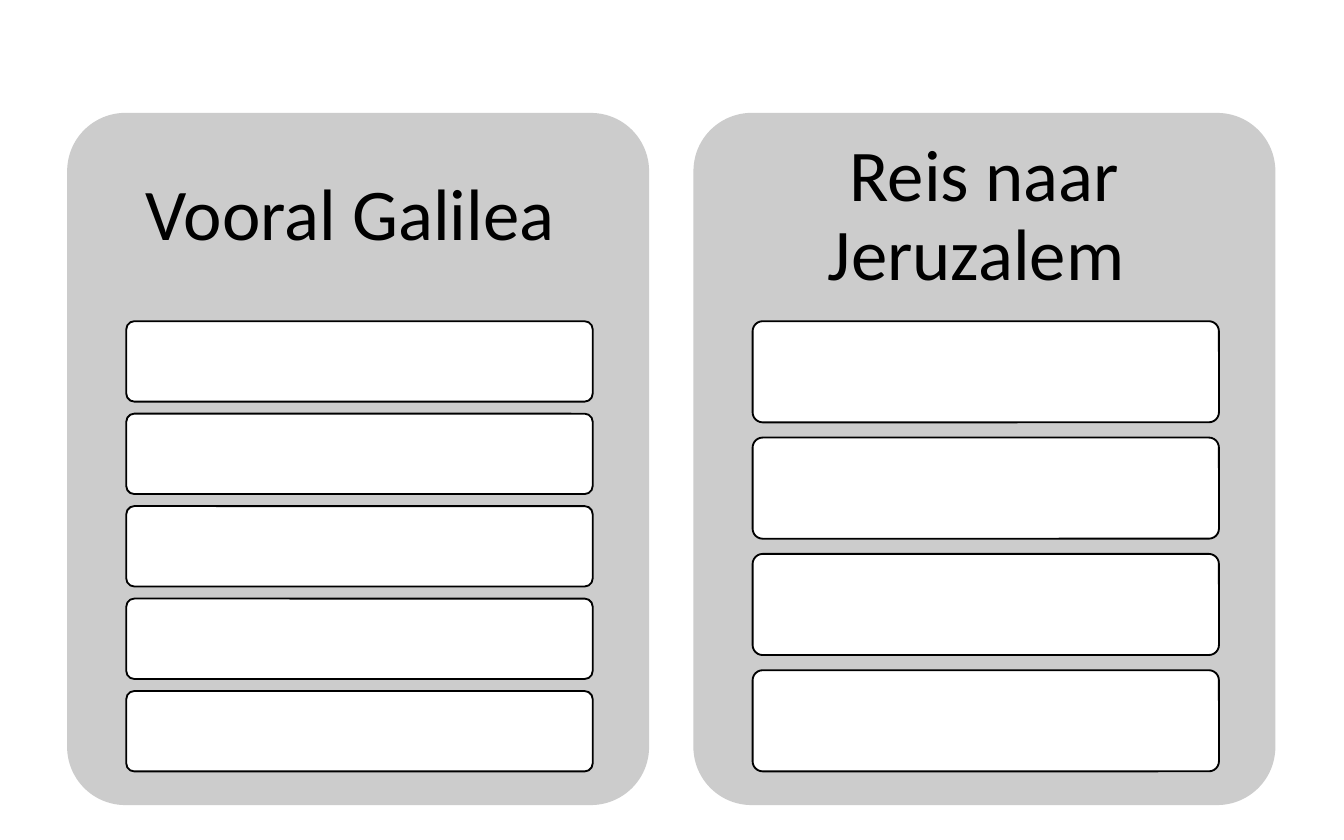
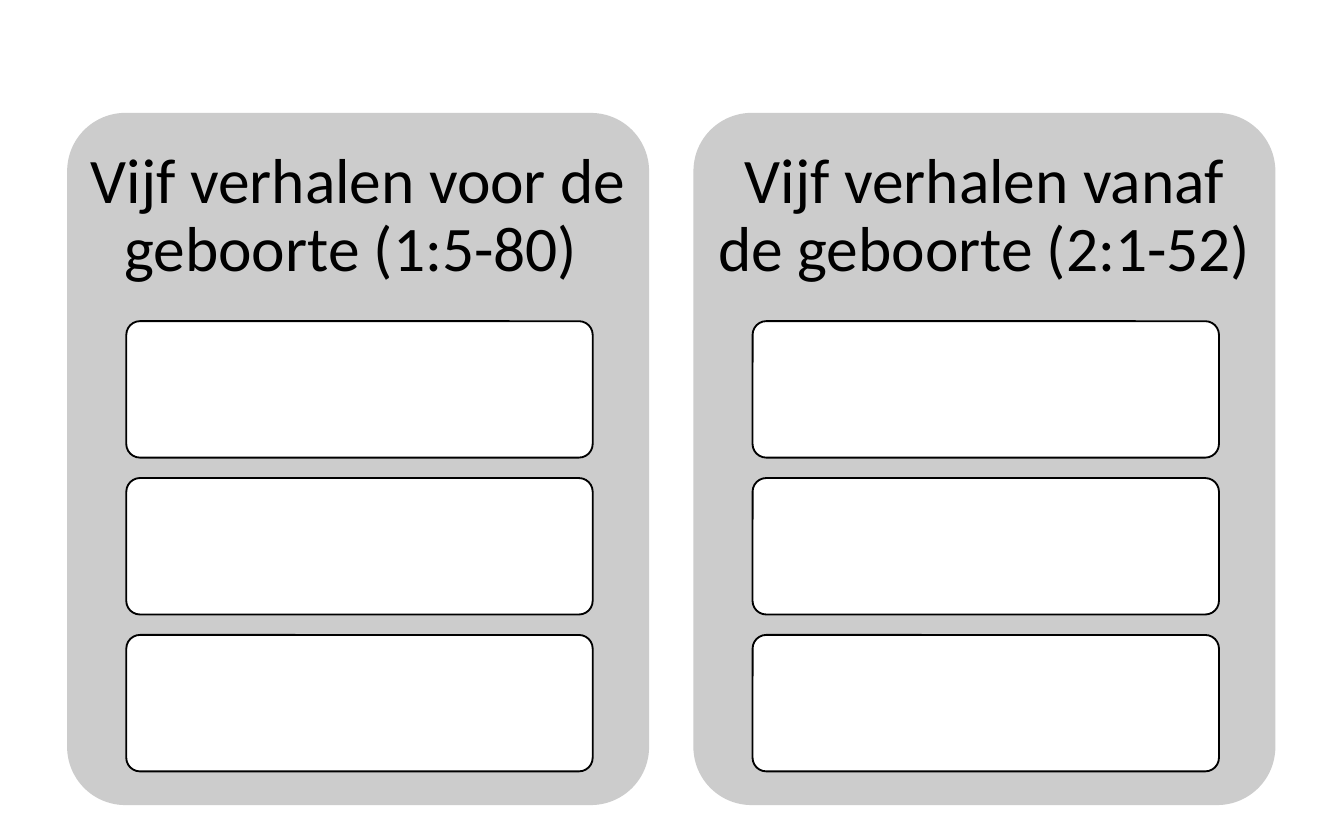
"""Build two slides that each compare two panels of empty answer boxes."""
from pptx import Presentation
from pptx.dml.color import RGBColor
from pptx.enum.shapes import MSO_SHAPE
from pptx.enum.text import MSO_ANCHOR, PP_ALIGN
from pptx.util import Inches, Pt

ROUNDED = MSO_SHAPE.ROUNDED_RECTANGLE
MIDDLE = MSO_ANCHOR.MIDDLE
CENTER = PP_ALIGN.CENTER

SLIDES = [
    {"size": 39, "inset": 0.16,
     "panels": [("Vooral Galilea ", 5), ("Reis naar Jeruzalem ", 4)]},
    {"size": 34, "inset": 0.14,
     "panels": [("Vijf verhalen voor de geboorte (1:5-80) ", 3),
                ("Vijf verhalen vanaf de geboorte (2:1-52) ", 3)]},
]

FONT = "Calibri"
BLACK, WHITE, GREY = "000000", "FFFFFF", "CCCCCC"
PANEL_LEFT, PANEL_TOP, PANEL_W, PANEL_H = 0.5, 0.84, 4.33, 5.15
PANEL_PITCH = 4.66
HEADING_H = 1.55
BOX_INDENT, BOX_W = 0.44, 3.47
STACK_H = 3.35
GAP_RATIO = 0.15


def color(value):
    return RGBColor.from_string(value)


def add_rounded(slide, x, y, w, h, fill, line=None):
    sp = slide.shapes.add_shape(ROUNDED, Inches(x), Inches(y), Inches(w), Inches(h))
    sp.adjustments[0] = 0.1
    sp.shadow.inherit = False
    sp.fill.solid()
    sp.fill.fore_color.rgb = color(fill)
    if line:
        sp.line.color.rgb = color(line)
        sp.line.width = Pt(1)
    else:
        sp.line.fill.background()


def add_heading(slide, x, text, size, inset):
    sp = slide.shapes.add_textbox(
        Inches(x), Inches(PANEL_TOP), Inches(PANEL_W), Inches(HEADING_H))
    tf = sp.text_frame
    tf.word_wrap = True
    tf.vertical_anchor = MIDDLE
    tf.margin_left = tf.margin_right = Inches(inset)
    tf.margin_top = tf.margin_bottom = Inches(inset)
    p = tf.paragraphs[0]
    p.text = text
    p.alignment = CENTER
    p.line_spacing = 0.9
    p.font.name = FONT
    p.font.size = Pt(size)
    p.font.color.rgb = color(BLACK)


def add_panel(slide, x, heading, count, size, inset):
    add_rounded(slide, x, PANEL_TOP, PANEL_W, PANEL_H, GREY)
    add_heading(slide, x, heading, size, inset)
    box_h = STACK_H / (count + GAP_RATIO * (count - 1))
    for i in range(count):
        y = PANEL_TOP + HEADING_H + i * box_h * (1 + GAP_RATIO)
        add_rounded(slide, x + BOX_INDENT, y, BOX_W, box_h, WHITE, BLACK)


def main():
    prs = Presentation()
    prs.slide_width, prs.slide_height = Inches(10), Inches(6.25)
    for content in SLIDES:
        s = prs.slides.add_slide(prs.slide_layouts[6])
        for i, (heading, count) in enumerate(content["panels"]):
            add_panel(s, PANEL_LEFT + i * PANEL_PITCH, heading, count,
                      content["size"], content["inset"])
    prs.save("out.pptx")


if __name__ == "__main__":
    main()
